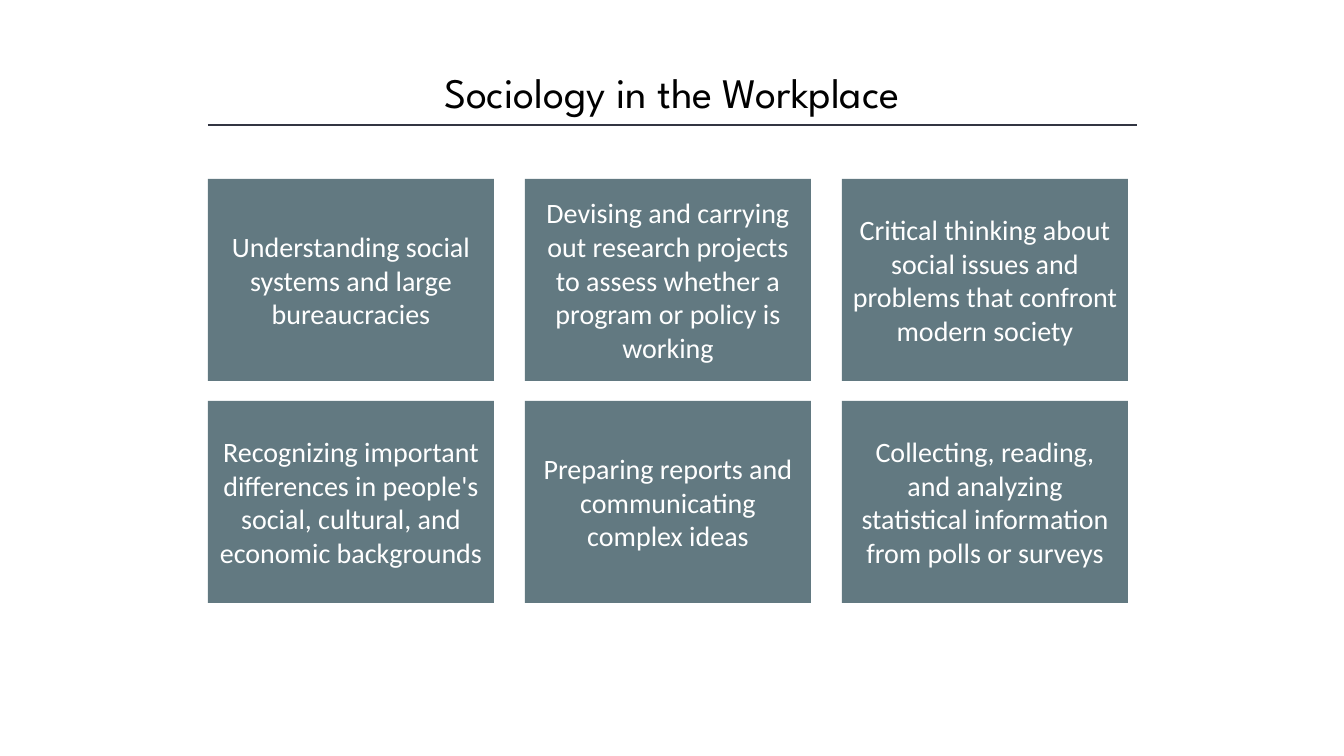
"""Build the slide "Sociology in the Workplace": a ruled title over a grid of six skills."""
from pptx import Presentation
from pptx.dml.color import RGBColor
from pptx.enum.shapes import MSO_CONNECTOR, MSO_SHAPE
from pptx.enum.text import MSO_ANCHOR, PP_ALIGN
from pptx.oxml.ns import qn
from pptx.util import Pt
from lxml.etree import SubElement

PX = 914400 / 100.8


def px(*lengths):
    return [round(n * PX) for n in lengths]


def set_text(tf, text, font, size, color, anchor):
    tf.word_wrap = True
    tf.vertical_anchor = anchor
    tf.text = text
    p = tf.paragraphs[0]
    p.alignment = PP_ALIGN.CENTER
    p.line_spacing = 1.0
    p.font.name = font
    p.font.size = Pt(size)
    p.font.color.rgb = RGBColor.from_string(color)


SKILLS = [
    "Understanding social systems and large bureaucracies",
    "Devising and carrying out research projects to assess whether a program or policy is working",
    "Critical thinking about social issues and problems that confront modern society",
    "Recognizing important differences in people's social, cultural, and economic backgrounds",
    "Preparing reports and communicating complex ideas",
    "Collecting, reading, and analyzing statistical information from polls or surveys",
]
LEFT, TOP, WIDTH, HEIGHT = 208, 179, 286, 202
STEP_X, STEP_Y = 317, 222

prs = Presentation()
prs.slide_width, prs.slide_height = px(1344, 756)
s = prs.slides.add_slide(prs.slide_layouts[5])

title = s.shapes.title
title.left, title.top, title.width, title.height = px(168, 61, 1008, 61)
set_text(title.text_frame, "Sociology in the Workplace", "League Spartan", 30, "000000", MSO_ANCHOR.TOP)

rule = s.shapes.add_connector(MSO_CONNECTOR.STRAIGHT, *px(LEFT, 125, 1137, 125))
rule.line.color.rgb = RGBColor.from_string("323542")
rule.line.width = Pt(1)
SubElement(rule._element.spPr, qn("a:effectLst"))

for i, skill in enumerate(SKILLS):
    row, col = divmod(i, 3)
    sp = s.shapes.add_shape(
        MSO_SHAPE.RECTANGLE, *px(LEFT + col * STEP_X, TOP + row * STEP_Y, WIDTH, HEIGHT))
    sp.shadow.inherit = False
    sp.fill.solid()
    sp.fill.fore_color.rgb = RGBColor.from_string("627981")
    sp.line.fill.background()
    set_text(sp.text_frame, skill, "Calibri", 20, "FFFFFF", MSO_ANCHOR.MIDDLE)

prs.save("out.pptx")
